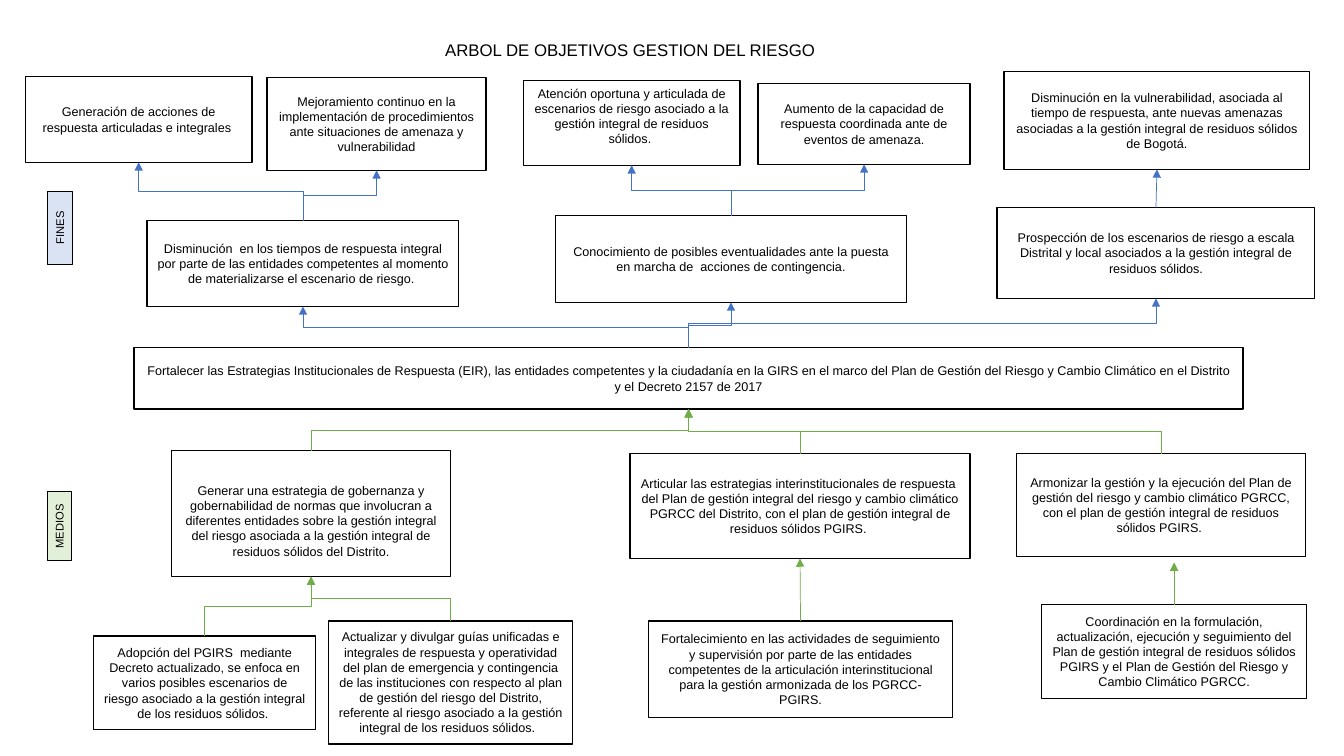
from dataclasses import dataclass

from lxml import etree
from pptx import Presentation
from pptx.dml.color import RGBColor
from pptx.enum.shapes import MSO_CONNECTOR, MSO_SHAPE
from pptx.enum.text import MSO_ANCHOR, PP_ALIGN
from pptx.oxml.ns import qn
from pptx.shapes.autoshape import Shape
from pptx.shapes.connector import Connector
from pptx.slide import Slide
from pptx.text.text import TextFrame
from pptx.util import Inches, Pt

RECT = MSO_SHAPE.RECTANGLE
STRAIGHT, ELBOW = MSO_CONNECTOR.STRAIGHT, MSO_CONNECTOR.ELBOW
CENTER, MIDDLE, TOP_ANCHOR = PP_ALIGN.CENTER, MSO_ANCHOR.MIDDLE, MSO_ANCHOR.TOP
TOP, BOTTOM = 0, 2

BLACK = RGBColor(0x00, 0x00, 0x00)
WHITE = RGBColor(0xFF, 0xFF, 0xFF)
BLUE = RGBColor(0x44, 0x72, 0xC4)
GREEN = RGBColor(0x70, 0xAD, 0x47)
PALE_BLUE = RGBColor(0xDA, 0xE3, 0xF3)
PALE_GREEN = RGBColor(0xE2, 0xF0, 0xD9)

# The slide is a grid of square cells
COLS, ROWS = 1333, 750
CELL = Inches(13.33) // COLS
FONT = "Arial"
BLANK_LINE = 14


@dataclass(frozen=True)
class Box:
    key: str
    col: float
    row: float
    cols: float
    rows: float
    text: str
    fill: RGBColor = WHITE
    size: float = 9
    border: float = 1
    rotation: float = 0
    anchor: MSO_ANCHOR = MIDDLE
    pad_top: float = 5
    pad_bottom: float = 5


@dataclass(frozen=True)
class Arrow:
    source: str
    target: str
    color: RGBColor


BOXES = [
    Box("fortalecer", 133, 345, 1100, 61,
        "Fortalecer las Estrategias Institucionales de Respuesta (EIR), las entidades competentes y la ciudadanía en la GIRS en el marco del Plan de Gestión del Riesgo y Cambio Climático en el Distrito y el Decreto 2157 de 2017"),
    # Means
    Box("gobernanza", 170, 447, 277, 125,
        "Generar una estrategia de gobernanza y gobernabilidad de normas que involucran a diferentes entidades sobre la gestión integral del riesgo asociada a la gestión integral de residuos sólidos del Distrito.",
        pad_top=5 + BLANK_LINE),
    Box("adopcion", 93, 631, 220, 93,
        "Adopción del PGIRS  mediante Decreto actualizado, se enfoca en varios posibles escenarios de riesgo asociado a la gestión integral de los residuos sólidos. "),
    Box("guias", 326, 616, 242, 122,
        "Actualizar y divulgar guías unificadas e integrales de respuesta y operatividad del plan de emergencia y contingencia de las instituciones con respecto al plan de gestión del riesgo del Distrito, referente al riesgo asociado a la gestión integral de los residuos sólidos.  "),
    Box("articular", 625, 450, 337, 104,
        "Articular las estrategias interinstitucionales de respuesta  del Plan de gestión integral del riesgo y cambio climático PGRCC del Distrito, con el plan de gestión integral de residuos sólidos PGIRS. "),
    Box("seguimiento", 643, 616, 302, 96,
        "Fortalecimiento en las actividades de seguimiento y supervisión por parte de las entidades competentes de la articulación interinstitucional para la gestión armonizada de los PGRCC-PGIRS."),
    Box("armonizar", 1008, 450, 287, 102,
        "Armonizar la gestión y la ejecución del Plan de gestión del riesgo y cambio climático PGRCC, con el plan de gestión integral de residuos sólidos PGIRS. "),
    Box("coordinacion", 1033, 600, 263, 93,
        "Coordinación en la formulación, actualización, ejecución y seguimiento del Plan de gestión integral de residuos sólidos PGIRS y el Plan de Gestión del Riesgo y Cambio Climático PGRCC."),
    # Ends
    Box("tiempos", 146, 219, 309, 85,
        "Disminución  en los tiempos de respuesta integral por parte de las entidades competentes al momento de materializarse el escenario de riesgo. "),
    Box("acciones", 25, 76, 225, 85,
        "Generación de acciones de respuesta articuladas e integrales "),
    Box("mejoramiento", 265, 77, 217, 92,
        "Mejoramiento continuo en la implementación de procedimientos ante situaciones de amenaza y vulnerabilidad"),
    Box("conocimiento", 551, 214, 348, 86,
        "Conocimiento de posibles eventualidades ante la puesta en marcha de  acciones de contingencia."),
    Box("atencion", 519, 80, 215, 84,
        "Atención oportuna y articulada de escenarios de riesgo asociado a la gestión integral de residuos sólidos. ",
        pad_bottom=5 + BLANK_LINE),
    Box("capacidad", 752, 83, 210, 80,
        "Aumento de la capacidad de\nrespuesta coordinada ante de eventos de amenaza."),
    Box("prospeccion", 989, 206, 315, 90,
        "Prospección de los escenarios de riesgo a escala Distrital y local asociados a la gestión integral de residuos sólidos."),
    Box("vulnerabilidad", 996, 71, 303, 97,
        "Disminución en la vulnerabilidad, asociada al tiempo de respuesta, ante nuevas amenazas asociadas a la gestión integral de residuos sólidos de Bogotá."),
    # Side labels
    Box("medios", 25, 510, 68, 24, "MEDIOS", PALE_GREEN, 8, 0.75, 270, TOP_ANCHOR),
    Box("fines", 23, 214, 73, 24, "FINES", PALE_BLUE, 8, 0.75, 270, TOP_ANCHOR),
]

ARROWS = [
    Arrow("gobernanza", "fortalecer", GREEN),
    Arrow("articular", "fortalecer", GREEN),
    Arrow("armonizar", "fortalecer", GREEN),
    Arrow("adopcion", "gobernanza", GREEN),
    Arrow("guias", "gobernanza", GREEN),
    Arrow("seguimiento", "articular", GREEN),
    Arrow("fortalecer", "tiempos", BLUE),
    Arrow("fortalecer", "conocimiento", BLUE),
    Arrow("fortalecer", "prospeccion", BLUE),
    Arrow("tiempos", "acciones", BLUE),
    Arrow("tiempos", "mejoramiento", BLUE),
    Arrow("conocimiento", "atencion", BLUE),
    Arrow("conocimiento", "capacidad", BLUE),
    Arrow("prospeccion", "vulnerabilidad", BLUE),
]


def cells(count: float) -> int:
    return round(count * CELL)


def write(tf: TextFrame, text: str, size: float) -> None:
    tf.word_wrap = True
    tf.text = text
    for p in tf.paragraphs:
        p.alignment = CENTER
        p.font.name, p.font.size = FONT, Pt(size)
        p.font.color.rgb = BLACK


def draw_box(s: Slide, box: Box) -> Shape:
    sp = s.shapes.add_shape(RECT, cells(box.col), cells(box.row), cells(box.cols), cells(box.rows))
    sp.shadow.inherit = False
    sp.rotation = box.rotation
    sp.fill.solid()
    sp.fill.fore_color.rgb = box.fill
    sp.line.color.rgb = BLACK
    sp.line.width = Pt(box.border)
    tf = sp.text_frame
    tf.vertical_anchor = box.anchor
    tf.margin_top, tf.margin_bottom = cells(box.pad_top), cells(box.pad_bottom)
    write(tf, box.text, box.size)
    return sp


def style_arrow(c: Connector, color: RGBColor) -> None:
    c.line.color.rgb = color
    c.line.width = Pt(0.5)
    etree.SubElement(c.line._get_or_add_ln(), qn("a:tailEnd"), type="triangle")
    etree.SubElement(c._element.spPr, qn("a:effectLst"))


def draw_arrow(s: Slide, source: Shape, target: Shape, color: RGBColor) -> None:
    """Rise from the top middle of source to the bottom middle of target."""
    x1, y1 = source.left + source.width // 2, source.top
    x2, y2 = target.left + target.width // 2, target.top + target.height
    if abs(x2 - x1) <= cells(1):
        c = s.shapes.add_connector(STRAIGHT, x1, y1, x2, y2)
        c.begin_connect(source, TOP)
        c.end_connect(target, BOTTOM)
    else:
        # An elbow leaves sideways, so it is laid flat and turned a quarter
        mid_x, mid_y = (x1 + x2) // 2, (y1 + y2) // 2
        half_run, half_rise = abs(x2 - x1) // 2, (y1 - y2) // 2
        side = 1 if x2 > x1 else -1
        c = s.shapes.add_connector(ELBOW, mid_x + side * half_rise, mid_y + half_run,
                                   mid_x - side * half_rise, mid_y - half_run)
        turn = 90 if side > 0 else 270
        c._element.spPr.find(qn("a:xfrm")).set("rot", str(turn * 60000))
    style_arrow(c, color)


def main() -> None:
    prs = Presentation()
    prs.slide_width, prs.slide_height = cells(COLS), cells(ROWS)
    s = prs.slides.add_slide(prs.slide_layouts[6])

    # Title
    title = s.shapes.add_textbox(cells(159), cells(35), cells(937), cells(30))
    write(title.text_frame, "ARBOL DE OBJETIVOS GESTION DEL RIESGO ", 12)

    # Tree
    shapes = {box.key: draw_box(s, box) for box in BOXES}
    for arrow in ARROWS:
        draw_arrow(s, shapes[arrow.source], shapes[arrow.target], arrow.color)

    # Arrow that stops short of its target
    coordination = shapes["coordinacion"]
    x = coordination.left + coordination.width // 2
    c = s.shapes.add_connector(STRAIGHT, x, coordination.top, x, cells(558))
    c.begin_connect(coordination, TOP)
    style_arrow(c, GREEN)

    prs.save("out.pptx")


if __name__ == "__main__":
    main()
